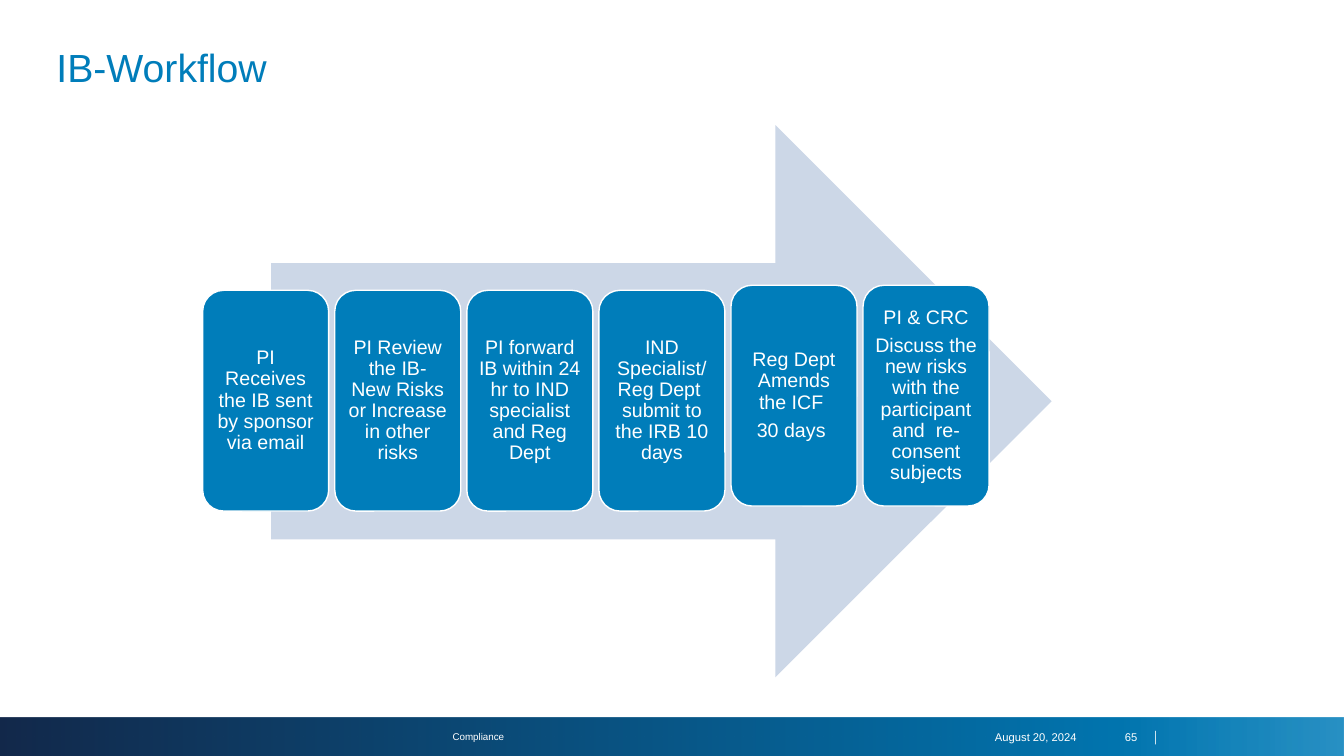
from copy import deepcopy
from dataclasses import dataclass

from lxml import etree
from pptx import Presentation
from pptx import util as u
from pptx.dml.color import RGBColor
from pptx.enum import shapes, text
from pptx.oxml import ns

COLORS = {"blue": "007DBA", "mid": "0275AF", "navy": "13294B", "pale": "CCD7E7", "white": "FFFFFF"}
ALIGN = text.PP_ALIGN
ANCHOR = text.MSO_ANCHOR


@dataclass(frozen=True)
class Step:
    lines: tuple[str, ...]
    top: float = 2.88


@dataclass(frozen=True)
class FooterItem:
    words: str
    left: float
    width: float
    size: float = 8
    align: ALIGN = ALIGN.RIGHT
    anchor: ANCHOR = ANCHOR.MIDDLE


STEPS = (
    Step(("PI Receives the IB sent by sponsor via email",)),
    Step(("PI Review the IB- New Risks or Increase in other risks",)),
    Step(("PI forward IB within 24 hr to IND specialist and Reg Dept",)),
    Step(("IND Specialist/ Reg Dept  submit to the IRB 10 days",)),
    Step(("Reg Dept Amends the ICF ", "30 days "), top=2.83),
    Step(("PI & CRC", "Discuss the new risks with the participant and  re-consent subjects"), top=2.83),
)
STEP_LEFT, STEP_PITCH, STEP_WIDTH, STEP_HEIGHT = 2.01, 1.31, 1.25, 2.19

FOOTER = (
    FooterItem("August 20, 2024", 9.18, 1.6),
    FooterItem("Compliance", 0.46, 8.57, size=7, align=ALIGN.CENTER, anchor=ANCHOR.TOP),
    FooterItem("65", 10.93, 0.45),
    FooterItem("│", 11.3, 0.3),
)


def color(name: str) -> RGBColor:
    return RGBColor.from_string(COLORS[name])


def place(left: float, top: float, width: float, height: float) -> tuple:
    return tuple(u.Inches(value) for value in (left, top, width, height))


def write(box, *lines: str, size: float, tone: str = "white", align=ALIGN.LEFT,
          anchor=ANCHOR.MIDDLE, spacing: float = 1.0, after: float = 0,
          inset: tuple[float, float] = (0.1, 0.05)) -> None:
    frame = box.text_frame
    frame.word_wrap = True
    frame.auto_size = text.MSO_AUTO_SIZE.NONE
    frame.vertical_anchor = anchor
    frame.margin_left = frame.margin_right = u.Inches(inset[0])
    frame.margin_top = frame.margin_bottom = u.Inches(inset[1])
    for index, line in enumerate(lines):
        para = frame.add_paragraph() if index else frame.paragraphs[0]
        para.alignment = align
        para.line_spacing = spacing
        para.space_after = u.Pt(after)
        span = para.add_run()
        span.text = line
        span.font.size = u.Pt(size)
        span.font.name = "Arial"
        span.font.color.rgb = color(tone)


def add_block(page, kind, area: tuple, tone: str, outline: str | None = None):
    block = page.shapes.add_shape(kind, *area)
    block.shadow.inherit = False
    block.fill.solid()
    block.fill.fore_color.rgb = color(tone)
    if outline:
        block.line.color.rgb = color(outline)
        block.line.width = u.Pt(1)
    else:
        block.line.fill.background()
    return block


def add_footer_bar(page) -> None:
    bar = add_block(page, shapes.MSO_SHAPE.RECTANGLE, place(0, 7.12, 13.33, 0.38), "blue")
    bar.fill.gradient()
    bar.fill.gradient_angle = 0
    stop_list = bar._element.spPr.find(f".//{ns.qn('a:gsLst')}")
    stop_list.insert(1, deepcopy(stop_list[0]))
    stops = zip(bar.fill.gradient_stops, (("navy", 0), ("mid", 0.83), ("blue", 1)))
    for stop, (tone, position) in stops:
        stop.color.rgb = color(tone)
        stop.position = position
    etree.SubElement(stop_list[-1][0], ns.qn("a:alpha"), val="84000")


def add_footer_item(page, item: FooterItem) -> None:
    box = page.shapes.add_textbox(*place(item.left, 7.2, item.width, 0.23))
    write(box, item.words, size=item.size, align=item.align, anchor=item.anchor)


def add_step(page, index: int, step: Step) -> None:
    area = place(STEP_LEFT + index * STEP_PITCH, step.top, STEP_WIDTH, STEP_HEIGHT)
    box = add_block(page, shapes.MSO_SHAPE.ROUNDED_RECTANGLE, area, "blue", outline="white")
    write(box, *step.lines, size=14, align=ALIGN.CENTER, spacing=0.9, after=5, inset=(0.06, 0.06))


def main() -> None:
    deck = Presentation()
    deck.slide_width, deck.slide_height = u.Inches(13.33), u.Inches(7.5)
    page = deck.slides.add_slide(deck.slide_layouts.get_by_name("Title Only"))
    title = page.shapes.title
    title.left, title.top, title.width, title.height = place(0.46, 0.42, 12.42, 0.54)
    write(title, "IB-Workflow", size=28, tone="blue", spacing=0.9)
    add_footer_bar(page)
    for item in FOOTER:
        add_footer_item(page, item)
    add_block(page, shapes.MSO_SHAPE.RIGHT_ARROW, place(2.69, 1.24, 7.74, 5.48), "pale")
    for index, step in enumerate(STEPS):
        add_step(page, index, step)
    deck.save("out.pptx")


if __name__ == "__main__":
    main()
